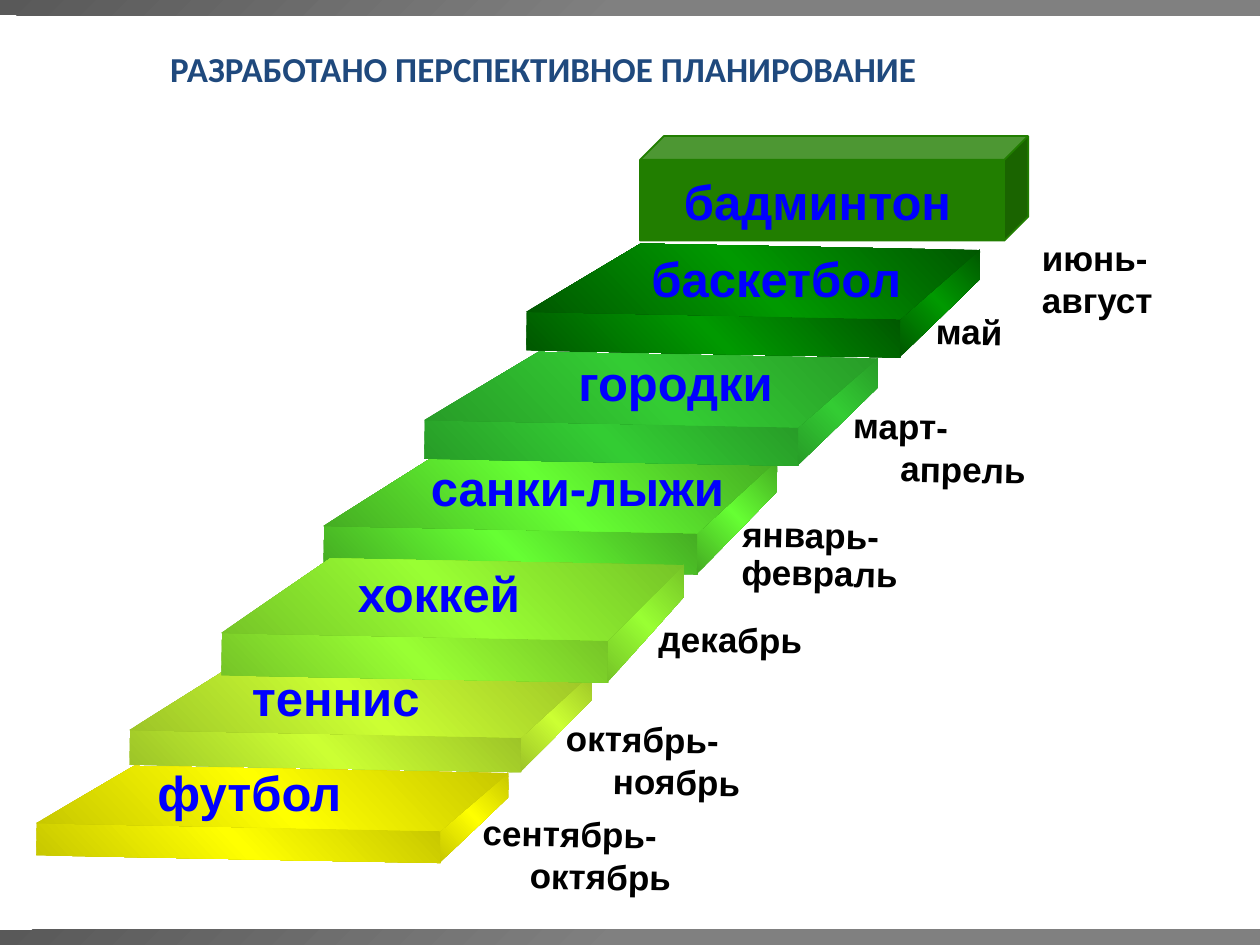
"""Build the slide of a staircase of sports planned over the school year."""
from copy import deepcopy

from pptx import Presentation
from pptx.dml.color import RGBColor as RGB
from pptx.enum.shapes import MSO_SHAPE as SHAPE
from pptx.enum.text import MSO_ANCHOR as ANCHOR, MSO_AUTO_SIZE as AUTO_SIZE, PP_ALIGN as ALIGN
from pptx.oxml.ns import qn
from pptx.util import Inches, Pt

THEME = {
    "title": {"name": "Calibri", "size": Pt(20), "bold": True, "color": "1F497D"},
    "sport": {"name": "Arial", "size": Pt(28), "bold": True, "color": "0000FF"},
    "month": {"name": "Arial", "size": Pt(20), "bold": True, "color": "000000"},
    "band": ("595959", "808080", "808080"),
    "top block": "217E00",
}
TILT = 1.1
SPORT_INDENT = 0.42
MONTH_INDENT = 0.38

TITLE = ("РАЗРАБОТАНО ПЕРСПЕКТИВНОЕ ПЛАНИРОВАНИЕ", (1.25, 0.33, 8.08, 0.77))
BAND_TOPS = (7.38, 0)
TOP_BLOCK = (5.08, 1.08, 3.08, 0.83)

STAIRS = [
    {"front": (0.29, 6.56, 3.21, 0.26), "depth": 0.53, "rise": 0.47, "edge": "C6C600", "middle": "FFFF00"},
    {"front": (4.18, 2.5, 2.97, 0.31), "depth": 0.62, "rise": 0.56, "edge": "005600", "middle": "009900"},
    {"front": (2.57, 4.2, 2.97, 0.33), "depth": 0.62, "rise": 0.59, "edge": "44AA22", "middle": "66FF33"},
    {"front": (1.03, 5.82, 3.11, 0.28), "depth": 0.55, "rise": 0.52, "edge": "9CC327", "middle": "CCFF33"},
    {"front": (3.37, 3.36, 2.97, 0.31), "depth": 0.62, "rise": 0.56, "edge": "279B27", "middle": "33CC33"},
    {"front": (1.76, 5.05, 3.07, 0.34), "depth": 0.59, "rise": 0.61, "edge": "75C327", "middle": "99FF33"},
]
SPORTS = [
    ("футбол", (0.83, 6, 2.5, 0.57)),
    ("теннис", (1.58, 5.25, 2.5, 0.57)),
    ("хоккей", (2.42, 4.42, 2.5, 0.57)),
    ("санки-лыжи", (3, 3.58, 3.08, 0.57)),
    ("городки", (4.17, 2.75, 2.5, 0.57)),
    ("баскетбол", (4.75, 1.92, 2.75, 0.57)),
]
TOP_SPORT = (("бадминтон",), (5.33, 1.31, 2.5, 0.57))
MONTHS = [
    (("январь-", "февраль"), (5.79, 4.03, 1.79, 0.73)),
    (("декабрь",), (5.13, 4.86, 1.8, 0.43)),
    (("сентябрь-октябрь",), (3.73, 6.4, 1.79, 0.77)),
    (("октябрь-ноябрь",), (4.39, 5.65, 1.79, 0.77)),
    (("май",), (7.33, 2.42, 1.79, 0.43)),
    (("март-апрель",), (6.67, 3.17, 1.79, 0.77)),
]
SUMMER = (("июнь-август",), (8.17, 1.83, 1.5, 0.77))


def inches(lengths):
    """Convert a sequence of numbers to lengths."""
    return [Inches(length) for length in lengths]


def style_font(font, style):
    """Apply a theme text style to a font."""
    for attribute, value in style.items():
        if attribute == "color":
            font.color.rgb = RGB.from_string(value)
        else:
            setattr(font, attribute, value)


def paint(shape, colors, angle):
    """Give a shape an even three-stop gradient and no line."""
    shape.shadow.inherit = False
    shape.line.fill.background()
    shape.fill.gradient()
    stop_list = shape._element.spPr.find(qn("a:gradFill")).find(qn("a:gsLst"))
    stop_list.append(deepcopy(stop_list[0]))
    for index, (stop, color) in enumerate(zip(shape.fill.gradient_stops, colors)):
        stop.position = index / 2
        stop.color.rgb = RGB.from_string(color)
    shape.fill.gradient_angle = angle


def add_face(shapes, corners):
    """Add a closed outline through the corners."""
    start, *others = [tuple(inches(corner)) for corner in corners]
    builder = shapes.build_freeform(*start)
    builder.add_line_segments(others, close=True)
    return builder.convert_to_shape()


def add_stair(shapes, front, depth, rise, edge, middle):
    """Add the front, side and top faces of one stair."""
    left, top, width, height = front
    right, inset = left + width, depth * 1.45
    side_top, back = top - rise + 0.03, top - rise + 0.01
    side_height = rise + height
    faces = [
        shapes.add_shape(SHAPE.RECTANGLE, *inches(front)),
        add_face(shapes, [(right + depth, side_top + 0.28 * side_height),
                          (right, side_top + side_height),
                          (right, side_top + rise), (right + depth, side_top)]),
        add_face(shapes, [(right, back + rise), (left, back + rise),
                          (left + inset, back), (right + depth, back)]),
    ]
    for face in faces:
        paint(face, (edge, middle, edge), 45)
        face.rotation = TILT


def add_label(shapes, lines, place, style, margin=0.1, hanging=0, tilt=0):
    """Add a text box, with a tightened second line where there is one."""
    label = shapes.add_textbox(*inches(place))
    label.rotation = tilt
    frame = label.text_frame
    frame.word_wrap = True
    frame.margin_left = Inches(margin)
    frame.text = "\n".join(lines)
    for index, paragraph in enumerate(frame.paragraphs):
        if hanging:
            indents = paragraph._p.get_or_add_pPr()
            indents.set("marL", str(Inches(hanging)))
            indents.set("indent", str(-Inches(hanging)))
        if index:
            paragraph.line_spacing = 0.4
            paragraph.space_before = Pt(10)
        style_font(paragraph.runs[0].font, style)


def add_title(slide):
    """Fill and place the title placeholder."""
    text, place = TITLE
    title = slide.shapes.title
    for side, length in zip(("left", "top", "width", "height"), inches(place)):
        setattr(title, side, length)
    frame = title.text_frame
    frame.text = text
    settings = {"word_wrap": True, "auto_size": AUTO_SIZE.NONE, "vertical_anchor": ANCHOR.TOP}
    for attribute, value in settings.items():
        setattr(frame, attribute, value)
    frame.paragraphs[0].alignment = ALIGN.LEFT
    style_font(frame.paragraphs[0].runs[0].font, THEME["title"])


def main():
    """Build and save the presentation."""
    deck = Presentation()
    deck.slide_width, deck.slide_height = inches((10, 7.5))
    slide = deck.slides.add_slide(deck.slide_layouts[5])
    shapes = slide.shapes
    add_title(slide)

    for top in BAND_TOPS:
        band = shapes.add_shape(SHAPE.RECTANGLE, *inches((0, top, 10, 0.12)))
        paint(band, THEME["band"], 315)
    for stair in STAIRS:
        add_stair(shapes, **stair)

    block = shapes.add_shape(SHAPE.CUBE, *inches(TOP_BLOCK))
    block.shadow.inherit = False
    block.adjustments[0] = 0.227
    block.fill.solid()
    for color in (block.fill.fore_color, block.line.color):
        color.rgb = RGB.from_string(THEME["top block"])
    block.line.width = Pt(1)

    for lines, place in MONTHS:
        add_label(shapes, lines, place, THEME["month"], hanging=MONTH_INDENT, tilt=TILT)
    for sport, place in SPORTS:
        add_label(shapes, [sport], place, THEME["sport"], margin=SPORT_INDENT)
    add_label(shapes, *TOP_SPORT, THEME["sport"])
    add_label(shapes, *SUMMER, THEME["month"])
    deck.save("out.pptx")


if __name__ == "__main__":
    main()
